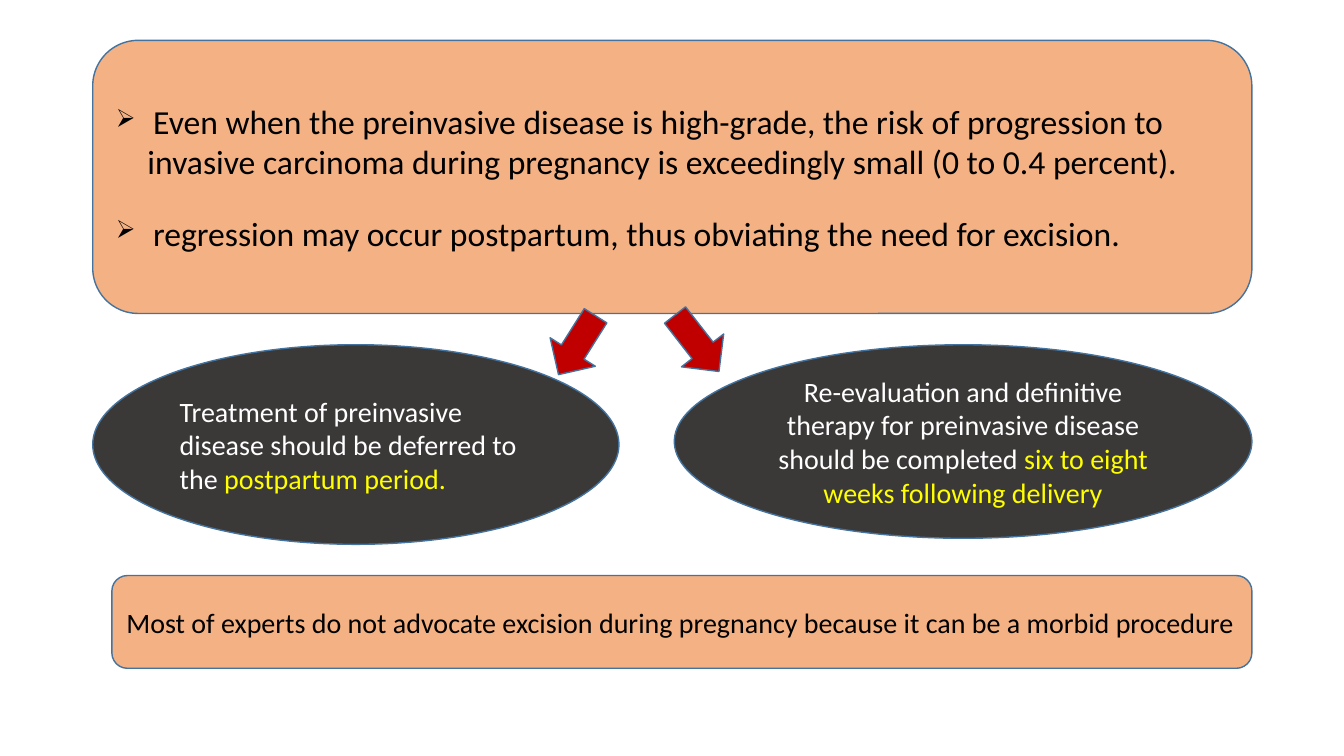
from lxml.etree import SubElement
from pptx import Presentation
from pptx.dml.color import RGBColor
from pptx.enum.shapes import MSO_SHAPE
from pptx.enum.text import MSO_ANCHOR, PP_ALIGN
from pptx.oxml.ns import qn
from pptx.util import Pt

PEACH = RGBColor(0xF4, 0xB1, 0x83)
CHARCOAL = RGBColor(0x3B, 0x38, 0x38)
OUTLINE = RGBColor(0x43, 0x73, 0x9E)
RED = RGBColor(0xC0, 0x00, 0x00)
BLACK = RGBColor(0x00, 0x00, 0x00)
WHITE = RGBColor(0xFF, 0xFF, 0xFF)
YELLOW = RGBColor(0xFF, 0xFF, 0x00)


class SlideBuilder:
    font_name = "Calibri"
    bullet_indent = Pt(22.5)

    def __init__(self, slide):
        self.slide = slide

    def shape(self, kind, left, top, width, height, fill):
        shape = self.slide.shapes.add_shape(kind, Pt(left), Pt(top), Pt(width), Pt(height))
        shape.shadow.inherit = False
        shape.fill.solid()
        shape.fill.fore_color.rgb = fill
        shape.line.color.rgb = OUTLINE
        shape.line.width = Pt(1)
        return shape

    def arrow(self, left, top, width, height, rotation):
        shape = self.shape(MSO_SHAPE.DOWN_ARROW, left, top, width, height, RED)
        shape.rotation = rotation

    def panel(self, kind, left, top, width, height, fill):
        shape = self.shape(kind, left, top, width, height, fill)
        shape.text_frame.word_wrap = True
        shape.text_frame.vertical_anchor = MSO_ANCHOR.MIDDLE
        return shape.text_frame

    def add_runs(self, paragraph, runs, alignment=PP_ALIGN.LEFT):
        paragraph.alignment = alignment
        for text, size, color in runs:
            run = paragraph.add_run()
            run.text = text
            run.font.name = self.font_name
            run.font.size = Pt(size)
            run.font.color.rgb = color

    def bullet(self, paragraph, text):
        properties = paragraph._p.get_or_add_pPr()
        properties.set("marL", str(self.bullet_indent))
        properties.set("indent", str(-self.bullet_indent))
        SubElement(properties, qn("a:buChar")).set("char", "➢")
        self.add_runs(paragraph, [(" ", 18, BLACK), (text, 24, BLACK)])


def main():
    presentation = Presentation()
    presentation.slide_width = Pt(960)
    presentation.slide_height = Pt(540)
    builder = SlideBuilder(presentation.slides.add_slide(presentation.slide_layouts[6]))

    risk = builder.panel(MSO_SHAPE.ROUNDED_RECTANGLE, 66.24, 28.8, 828, 195.12, PEACH)
    builder.bullet(
        risk.paragraphs[0],
        "Even when the preinvasive disease is high-grade, the risk of progression to "
        "invasive carcinoma during pregnancy is exceedingly small (0 to 0.4 percent).",
    )
    regression = risk.add_paragraph()
    regression.space_before = Pt(22)
    builder.bullet(
        regression, "regression may occur postpartum, thus obviating the need for excision."
    )

    treatment = builder.panel(MSO_SHAPE.OVAL, 66.24, 246.24, 375.84, 142.56, CHARCOAL)
    builder.add_runs(treatment.paragraphs[0], [
        ("Treatment of preinvasive disease should be deferred to the ", 20, WHITE),
        ("postpartum period.", 20, YELLOW),
    ])

    therapy = builder.panel(MSO_SHAPE.OVAL, 481.68, 246.24, 412.56, 138.24, CHARCOAL)
    builder.add_runs(therapy.paragraphs[0], [
        ("Re-evaluation and definitive therapy for preinvasive disease should be completed ",
         20, WHITE),
        ("six to eight weeks following delivery", 20, YELLOW),
    ], PP_ALIGN.CENTER)

    advice = builder.panel(MSO_SHAPE.ROUNDED_RECTANGLE, 79.92, 411.12, 814.32, 66.24, PEACH)
    builder.add_runs(advice.paragraphs[0], [
        ("Most of experts do not advocate excision during pregnancy "
         "because it can be a morbid procedure", 20, BLACK),
    ])

    builder.arrow(393.12, 221.76, 38.16, 49.68, 32.2)
    builder.arrow(478.8, 219.6, 38.16, 51.12, 322.1)

    presentation.save("out.pptx")


if __name__ == "__main__":
    main()
